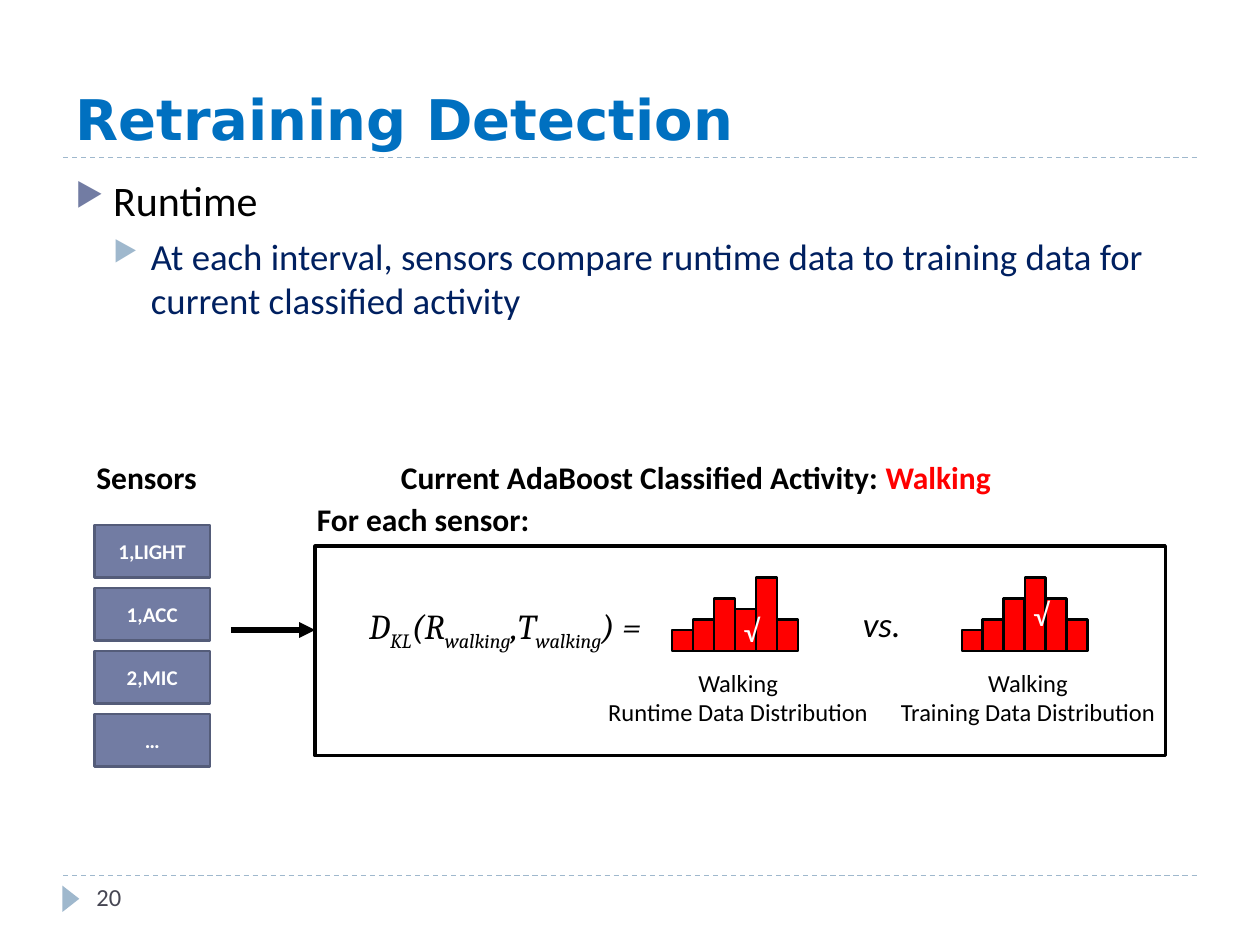
from dataclasses import dataclass

from lxml.etree import SubElement
from pptx import Presentation
from pptx.dml.color import RGBColor
from pptx.enum.dml import MSO_LINE
from pptx.enum.shapes import MSO_CONNECTOR, MSO_SHAPE
from pptx.enum.text import MSO_ANCHOR as Anchor, MSO_AUTO_SIZE as AutoSize, PP_ALIGN as Align
from pptx.oxml.ns import qn
from pptx.util import Pt

PX = 7620  # 120 px to the inch

BLACK = RGBColor(0x00, 0x00, 0x00)
WHITE = RGBColor(0xFF, 0xFF, 0xFF)
RED = RGBColor(0xFF, 0x00, 0x00)
TITLE_BLUE = RGBColor(0x00, 0x70, 0xC0)
NAVY = RGBColor(0x00, 0x20, 0x60)
SLATE = RGBColor(0x72, 0x7C, 0xA3)
DARK_SLATE = RGBColor(0x54, 0x5C, 0x79)
PALE_BLUE = RGBColor(0x9F, 0xB8, 0xCD)
PAGE_GREY = RGBColor(0x46, 0x46, 0x53)


@dataclass(frozen=True)
class Style:
    size: int
    color: RGBColor = BLACK
    bold: bool = False
    italic: bool = False
    font: str = "Calibri"


@dataclass(frozen=True)
class Box:
    left: int
    top: int
    width: int
    height: int

    def emu(self) -> tuple:
        return tuple(v * PX for v in (self.left, self.top, self.width, self.height))


@dataclass(frozen=True)
class Label:
    box: Box
    lines: tuple
    style: Style
    align: Align = Align.LEFT
    anchor: Anchor = Anchor.TOP
    wrap: bool = True
    grow: bool = True


@dataclass(frozen=True)
class BulletLine:
    text: str
    style: Style
    indent: int
    space_before: int
    bullet_color: RGBColor


@dataclass(frozen=True)
class Histogram:
    left: int
    heights: tuple
    caption: tuple
    caption_width: int


HEADING = Style(18, bold=True)
FORMULA = Style(20, italic=True, font="Cambria")
CHECK = Style(18, WHITE)
SENSOR = Style(12, WHITE, bold=True)

BAR_WIDTH, BAR_BASE, CHECKED_BAR = 20, 620, 3
HANGING = 36

TITLE = Label(Box(60, 20, 1080, 130), ("Retraining Detection",),
              Style(32, TITLE_BLUE, bold=True, font="DejaVu Sans"),
              anchor=Anchor.BOTTOM, grow=False)
PAGE_NUMBER = Label(Box(80, 834, 260, 48), ("20",), Style(14, PAGE_GREY), grow=False)
SENSORS_HEADING = Label(Box(80, 430, 134, 48), ("Sensors",), HEADING, wrap=False)
ACTIVITY = Label(Box(370, 430, 668, 48), ("Current AdaBoost Classified Activity: ",),
                 HEADING, wrap=False)
DIVERGENCE = Label(Box(317, 570, 328, 53), ("D",), FORMULA, Align.CENTER, wrap=False)
VERSUS = Label(Box(810, 568, 70, 53), ("vs.",), Style(20, italic=True))
EACH_SENSOR = Label(Box(290, 470, 320, 48), ("For each sensor:",), HEADING)

BODY = (
    BulletLine("Runtime", Style(24), 36, 6, SLATE),
    BulletLine("At each interval, sensors compare runtime data to training data "
               "for current classified activity", Style(21, NAVY), 72, 5, PALE_BLUE),
)
SENSOR_NAMES = ("1,LIGHT", "1,ACC", "2,MIC", "…")
RUNTIME = Histogram(640, (20, 30, 50, 40, 70, 30),
                    ("Walking", "Runtime Data Distribution"), 278)
TRAINING = Histogram(916, (20, 30, 50, 70, 50, 30),
                     ("Walking", "Training Data Distribution"), 274)


def format_run(run, style: Style, baseline: int = 0) -> None:
    font = run.font
    font.name, font.size = style.font, Pt(style.size)
    font.bold, font.italic = style.bold, style.italic
    font.color.rgb = style.color
    if baseline:
        run._r.get_or_add_rPr().set("baseline", str(baseline * 1000))


def add_run(paragraph, text: str, style: Style, baseline: int = 0) -> None:
    run = paragraph.add_run()
    run.text = text
    format_run(run, style, baseline)


def add_label(slide, label: Label):
    """Draw a text box and return its text frame."""
    frame = slide.shapes.add_textbox(*label.box.emu()).text_frame
    frame.text = "\n".join(label.lines)
    frame.word_wrap = label.wrap
    frame.vertical_anchor = label.anchor
    frame.auto_size = AutoSize.SHAPE_TO_FIT_TEXT if label.grow else AutoSize.NONE
    for paragraph in frame.paragraphs:
        paragraph.alignment = label.align
        for run in paragraph.runs:
            format_run(run, label.style)
    return frame


def add_block(slide, box: Box, fill, line, weight: float, text: str = "",
              style: Style = SENSOR, kind=MSO_SHAPE.RECTANGLE):
    block = slide.shapes.add_shape(kind, *box.emu())
    block.shadow.inherit = False
    if fill is None:
        block.fill.background()
    else:
        block.fill.solid()
        block.fill.fore_color.rgb = fill
    if line is None:
        block.line.fill.background()
    else:
        block.line.color.rgb = line
        block.line.width = Pt(weight)
    if text:
        frame = block.text_frame
        frame.text = text
        frame.vertical_anchor = Anchor.MIDDLE
        frame.paragraphs[0].alignment = Align.CENTER
        format_run(frame.paragraphs[0].runs[0], style)
    return block


def add_horizontal(slide, left: int, right: int, y: int, color: RGBColor, weight: float):
    line = slide.shapes.add_connector(MSO_CONNECTOR.STRAIGHT,
                                      left * PX, y * PX, right * PX, y * PX)
    line.line.color.rgb = color
    line.line.width = Pt(weight)
    SubElement(line._element.spPr, qn("a:effectLst"))
    return line


def add_body(slide) -> None:
    frame = slide.shapes.add_textbox(*Box(60, 160, 1080, 160).emu()).text_frame
    frame.word_wrap = True
    frame.text = "\n".join(item.text for item in BODY)
    for level, (paragraph, item) in enumerate(zip(frame.paragraphs, BODY)):
        paragraph.level = level
        paragraph.space_before = Pt(item.space_before)
        format_run(paragraph.runs[0], item.style)
        props = paragraph._p.get_or_add_pPr()
        props.set("marL", str(item.indent * PX))
        props.set("indent", str(-HANGING * PX))
        color = SubElement(props, qn("a:buClr"))
        SubElement(color, qn("a:srgbClr")).set("val", str(item.bullet_color))
        SubElement(props, qn("a:buSzPct")).set("val", "76000")
        SubElement(props, qn("a:buChar")).set("char", "▶")


def add_histogram(slide, histogram: Histogram) -> None:
    for i, height in reversed(list(enumerate(histogram.heights))):
        bar = Box(histogram.left + i * BAR_WIDTH, BAR_BASE - height, BAR_WIDTH, height)
        add_block(slide, bar, RED, BLACK, 1.5, "√" if i == CHECKED_BAR else "", CHECK)
    middle = histogram.left + len(histogram.heights) * BAR_WIDTH // 2 + 3
    width = histogram.caption_width
    add_label(slide, Label(Box(middle - width // 2, 630, width, 68), histogram.caption,
                           Style(14), Align.CENTER, wrap=False))


def main() -> None:
    deck = Presentation()
    deck.slide_width, deck.slide_height = 1200 * PX, 900 * PX
    slide = deck.slides.add_slide(deck.slide_layouts[6])

    for y in (834, 150):
        add_horizontal(slide, 60, 1140, y, PALE_BLUE, 0.75).line.dash_style = MSO_LINE.DASH
    page_marker = add_block(slide, Box(55, 848, 25, 16), PALE_BLUE, None, 0,
                            kind=MSO_SHAPE.ISOSCELES_TRIANGLE)
    page_marker.rotation = 90
    add_label(slide, TITLE)
    add_label(slide, PAGE_NUMBER)
    add_body(slide)

    for i, name in enumerate(SENSOR_NAMES):
        add_block(slide, Box(90, 500 + 60 * i, 110, 50), SLATE, DARK_SLATE, 1.5, name)
    add_label(slide, SENSORS_HEADING)
    activity = add_label(slide, ACTIVITY).paragraphs[0]
    add_run(activity, "Walking", Style(18, RED, bold=True))

    formula = add_label(slide, DIVERGENCE).paragraphs[0]
    for text, baseline in (("KL", -25), ("(R", 0), ("walking", -25), (",T", 0),
                           ("walking", -25), (") =", 0)):
        add_run(formula, text, FORMULA, baseline)
    add_histogram(slide, RUNTIME)
    add_block(slide, Box(300, 520, 810, 200), None, BLACK, 1.75)
    arrow = add_horizontal(slide, 220, 300, 600, BLACK, 3)
    SubElement(arrow.line._get_or_add_ln(), qn("a:tailEnd")).set("type", "triangle")
    add_label(slide, VERSUS)
    add_histogram(slide, TRAINING)
    add_label(slide, EACH_SENSOR)

    deck.save("out.pptx")


if __name__ == "__main__":
    main()
